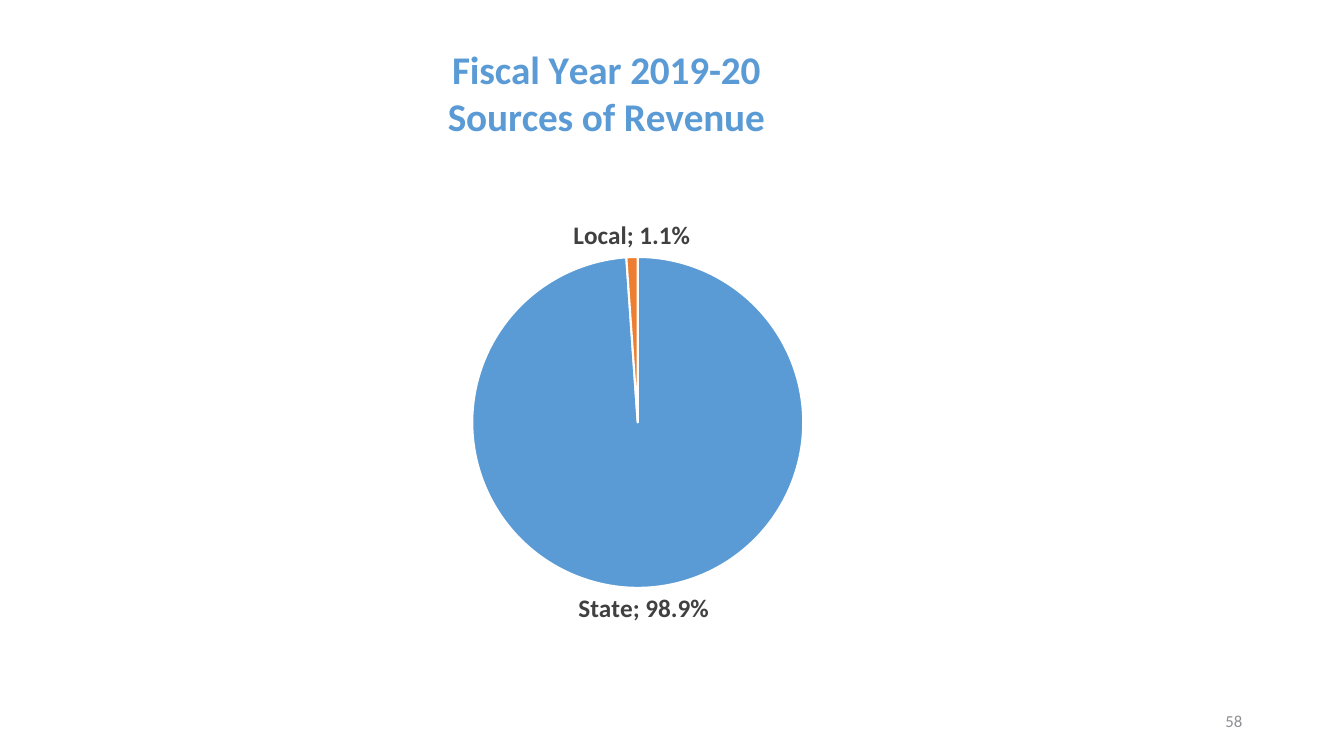
import pptx
import pptx.chart.data
import pptx.dml.color
import pptx.enum.chart
import pptx.enum.text
import pptx.oxml
import pptx.oxml.ns
import pptx.util

BLUE = pptx.dml.color.RGBColor(0x5B, 0x9B, 0xD5)
ORANGE = pptx.dml.color.RGBColor(0xED, 0x7D, 0x31)
WHITE = pptx.dml.color.RGBColor(0xFF, 0xFF, 0xFF)
DARK = pptx.dml.color.RGBColor(0x40, 0x40, 0x40)
GREY = pptx.dml.color.RGBColor(0x8E, 0x8E, 0x94)
FONT = "Calibri"
ALIGN = pptx.enum.text.PP_ALIGN
NAMESPACE = pptx.oxml.ns.nsdecls("c")


def write_text(frame, text, *, size, color, bold=False, align=ALIGN.CENTER):
    for index, line in enumerate(text.split("\n")):
        para = frame.add_paragraph() if index else frame.paragraphs[0]
        para.alignment = align
        span = para.add_run()
        span.text = line
        span.font.name = FONT
        span.font.size = pptx.util.Pt(size)
        span.font.bold = bold
        span.font.color.rgb = color


def set_layout(element, **shares):
    """Place a chart part by shares of the chart's size."""
    for old in element.findall(pptx.oxml.ns.qn("c:layout")):
        element.remove(old)
    target = '<c:layoutTarget val="inner"/>' if "w" in shares else ""
    modes = '<c:xMode val="edge"/><c:yMode val="edge"/>'
    values = "".join(f'<c:{key} val="{share}"/>' for key, share in shares.items())
    return pptx.oxml.parse_xml(
        f"<c:layout {NAMESPACE}><c:manualLayout>{target}{modes}{values}"
        "</c:manualLayout></c:layout>")


deck = pptx.Presentation()
deck.slide_width = pptx.util.Inches(13.33)
deck.slide_height = pptx.util.Inches(7.5)
page = deck.slides.add_slide(deck.slide_layouts[6])

# Pie chart of revenue sources
data = pptx.chart.data.CategoryChartData(number_format="0.0%")
data.categories = ["State", "Local"]
data.add_series("Series 1", [0.989, 0.011])
chart = page.shapes.add_chart(
    pptx.enum.chart.XL_CHART_TYPE.PIE,
    pptx.util.Inches(1.92), pptx.util.Inches(0.3),
    pptx.util.Inches(8.9), pptx.util.Inches(6.08), data).chart
chart.has_legend = False
chart.font.name = FONT
chart.font.size = pptx.util.Pt(10)

plot = chart.plots[0]
plot.vary_by_categories = True
for index, color in enumerate([BLUE, ORANGE]):
    slice_format = plot.series[0].points[index].format
    slice_format.fill.solid()
    slice_format.fill.fore_color.rgb = color
    slice_format.line.color.rgb = WHITE
    slice_format.line.width = pptx.util.Pt(1.5)

# Chart title
chart.has_title = True
title = chart.chart_title
write_text(title.text_frame, "Fiscal Year 2019-20\nSources of Revenue",
           size=28, color=BLUE, bold=True)
title_element = title._element
title_layout = set_layout(title_element, x=0.28, y=0.02)
title_element.find(pptx.oxml.ns.qn("c:tx")).addnext(title_layout)

# Pie position below the title
area = chart._chartSpace.chart.plotArea
area.insert(0, set_layout(area, x=0.31, y=0.37, w=0.37, h=0.54))

# Slice labels
labels = plot.series[0].data_labels
labels.show_category_name = True
labels.show_value = True
labels.show_percentage = False
labels.number_format = "0.0%"
labels.number_format_is_linked = False
labels.position = pptx.enum.chart.XL_LABEL_POSITION.OUTSIDE_END
labels.font.name = FONT
labels.font.size = pptx.util.Pt(18)
labels.font.bold = True
labels.font.color.rgb = DARK
separator = pptx.oxml.parse_xml(f"<c:separator {NAMESPACE}>; </c:separator>")
labels._element.find(pptx.oxml.ns.qn("c:showBubbleSize")).addnext(separator)

# Page number
box = page.shapes.add_textbox(
    pptx.util.Inches(9.42), pptx.util.Inches(6.95),
    pptx.util.Inches(3), pptx.util.Inches(0.4))
box.text_frame.word_wrap = True
box.text_frame.vertical_anchor = pptx.enum.text.MSO_ANCHOR.MIDDLE
write_text(box.text_frame, "58", size=12, color=GREY, align=ALIGN.RIGHT)

deck.save("out.pptx")
